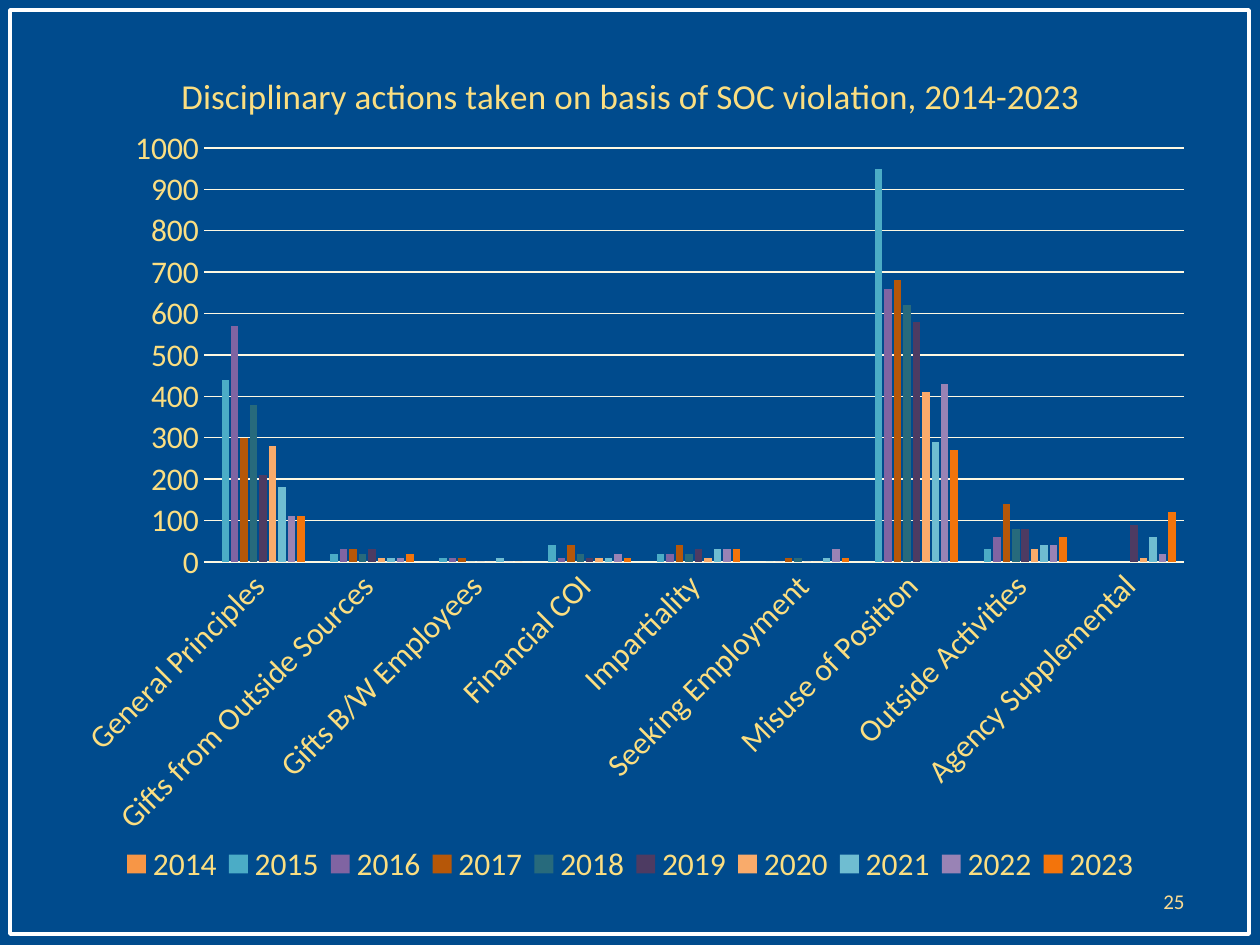
import dataclasses

import lxml.etree
import pptx
import pptx.chart.data
import pptx.dml.color
import pptx.enum.chart
import pptx.enum.shapes
import pptx.enum.text
import pptx.oxml.ns
import pptx.util

SCALE = 914400 / 126
qn = pptx.oxml.ns.qn


@dataclasses.dataclass(frozen=True)
class Theme:
    font: str = "Calibri"
    back: str = "004B8D"
    frame: str = "FFFFFF"
    text: str = "FBDE81"
    page: str = "FBDB92"
    grid: str = "FEF8E2"
    title_size: int = 20
    label_size: int = 18
    page_size: int = 12


THEME = Theme()
GROUPS = ["General Principles", "Gifts from Outside Sources",
          "Gifts B/W Employees", "Financial COI", "Impartiality",
          "Seeking Employment", "Misuse of Position", "Outside Activities",
          "Agency Supplemental"]
YEARS = [
    ("2014", "F79646", [None] * 9),
    ("2015", "4BACC6", [440, 20, 10, 40, 20, 0, 950, 30, None]),
    ("2016", "8064A2", [570, 30, 10, 10, 20, 0, 660, 60, None]),
    ("2017", "B65708", [300, 30, 10, 40, 40, 10, 680, 140, None]),
    ("2018", "276A7C", [380, 20, 0, 20, 20, 10, 620, 80, None]),
    ("2019", "4D3B62", [210, 30, 0, 10, 30, 0, 580, 80, 90]),
    ("2020", "F9AB6B", [280, 10, 0, 10, 10, 0, 410, 30, 10]),
    ("2021", "6FBDD1", [180, 10, 10, 10, 30, 10, 290, 40, 60]),
    ("2022", "9983B5", [110, 10, 0, 20, 30, 30, 430, 40, 20]),
    ("2023", "F3740B", [110, 20, 0, 10, 30, 10, 270, 60, 120]),
]


def px(num):
    return pptx.util.Emu(round(num * SCALE))


def rgb(code):
    return pptx.dml.color.RGBColor.from_string(code)


def style(font, size, color):
    font.name = THEME.font
    font.size = pptx.util.Pt(size)
    font.bold = False
    font.color.rgb = rgb(color)


def write(frame, text, size, color, align="CENTER"):
    """Put one formatted paragraph into a text frame."""
    para = frame.paragraphs[0]
    para.alignment = getattr(pptx.enum.text.PP_ALIGN, align)
    run = para.add_run()
    run.text = text
    style(run.font, size, color)


def rule(line, color, width):
    line.color.rgb = rgb(color)
    line.width = pptx.util.Pt(width)


def place(part, index, box, spot, inner=False):
    """Fix a chart part at spot (left, top[, width, height]) px inside box."""
    for old in part.findall(qn("c:layout")):
        part.remove(old)
    layout = lxml.etree.Element(qn("c:layout"))
    manual = lxml.etree.SubElement(layout, qn("c:manualLayout"))
    pairs = [("layoutTarget", "inner")] if inner else []
    pairs += [("xMode", "edge"), ("yMode", "edge")]
    pairs += [(key, f"{num / full:.4f}") for key, num, full
              in zip("xywh", spot, box[2:] * 2)]
    for key, val in pairs:
        lxml.etree.SubElement(manual, qn("c:" + key)).set("val", val)
    part.insert(index, layout)


def add_frame(slide, box):
    kind = pptx.enum.shapes.MSO_SHAPE.RECTANGLE
    frame = slide.shapes.add_shape(kind, *map(px, box))
    frame.shadow.inherit = False
    frame.fill.background()
    rule(frame.line, THEME.frame, 2)


def add_page(slide, box, text):
    frame = slide.shapes.add_textbox(*map(px, box)).text_frame
    frame.word_wrap = True
    frame.vertical_anchor = pptx.enum.text.MSO_ANCHOR.MIDDLE
    write(frame, text, THEME.page_size, THEME.page, align="RIGHT")


def set_axes(chart):
    none = pptx.enum.chart.XL_TICK_MARK.NONE
    cat, val = chart.category_axis, chart.value_axis
    for axis in (cat, val):
        axis.major_tick_mark = axis.minor_tick_mark = none
        style(axis.tick_labels.font, THEME.label_size, THEME.text)
    rule(cat.format.line, THEME.grid, 0.75)
    cat._element.find(qn("c:txPr")).find(qn("a:bodyPr")).set("rot", "-2700000")
    val.format.line.fill.background()
    rule(val.major_gridlines.format.line, THEME.grid, 0.75)
    val.minimum_scale, val.maximum_scale, val.major_unit = 0, 1000, 100


def add_bars(slide, box):
    data = pptx.chart.data.CategoryChartData()
    data.categories = GROUPS
    for name, _, vals in YEARS:
        data.add_series(name, vals)
    kind = pptx.enum.chart.XL_CHART_TYPE.COLUMN_CLUSTERED
    chart = slide.shapes.add_chart(kind, *map(px, box), data).chart
    style(chart.font, THEME.label_size, THEME.text)

    plot = chart.plots[0]
    plot.vary_by_categories = False
    plot.gap_width, plot.overlap = 219, -27
    for bars, (_, color, _) in zip(plot.series, YEARS):
        bars.invert_if_negative = False
        bars.format.fill.solid()
        bars.format.fill.fore_color.rgb = rgb(color)
    set_axes(chart)

    chart.has_title = True
    write(chart.chart_title.text_frame,
          "Disciplinary actions taken on basis of SOC violation, 2014-2023",
          THEME.title_size, THEME.text)
    chart.has_legend = True
    chart.legend.position = pptx.enum.chart.XL_LEGEND_POSITION.BOTTOM
    chart.legend.include_in_layout = False
    style(chart.legend.font, THEME.label_size, THEME.text)

    area = chart._chartSpace.find(qn("c:chart"))
    place(area.find(qn("c:title")), 1, box, (122, 34))
    place(area.find(qn("c:plotArea")), 0, box, (151, 117, 980, 414), inner=True)
    place(area.find(qn("c:legend")), 1, box, (62, 810, 1031, 46))


def main():
    deck = pptx.Presentation()
    deck.slide_width, deck.slide_height = px(1260), px(945)
    slide = deck.slides.add_slide(deck.slide_layouts[6])
    slide.background.fill.solid()
    slide.background.fill.fore_color.rgb = rgb(THEME.back)
    add_frame(slide, (10, 10, 1239, 924))
    add_page(slide, (903, 876, 294, 50), "25")
    add_bars(slide, (53, 31, 1155, 882))
    deck.save("out.pptx")


if __name__ == "__main__":
    main()
